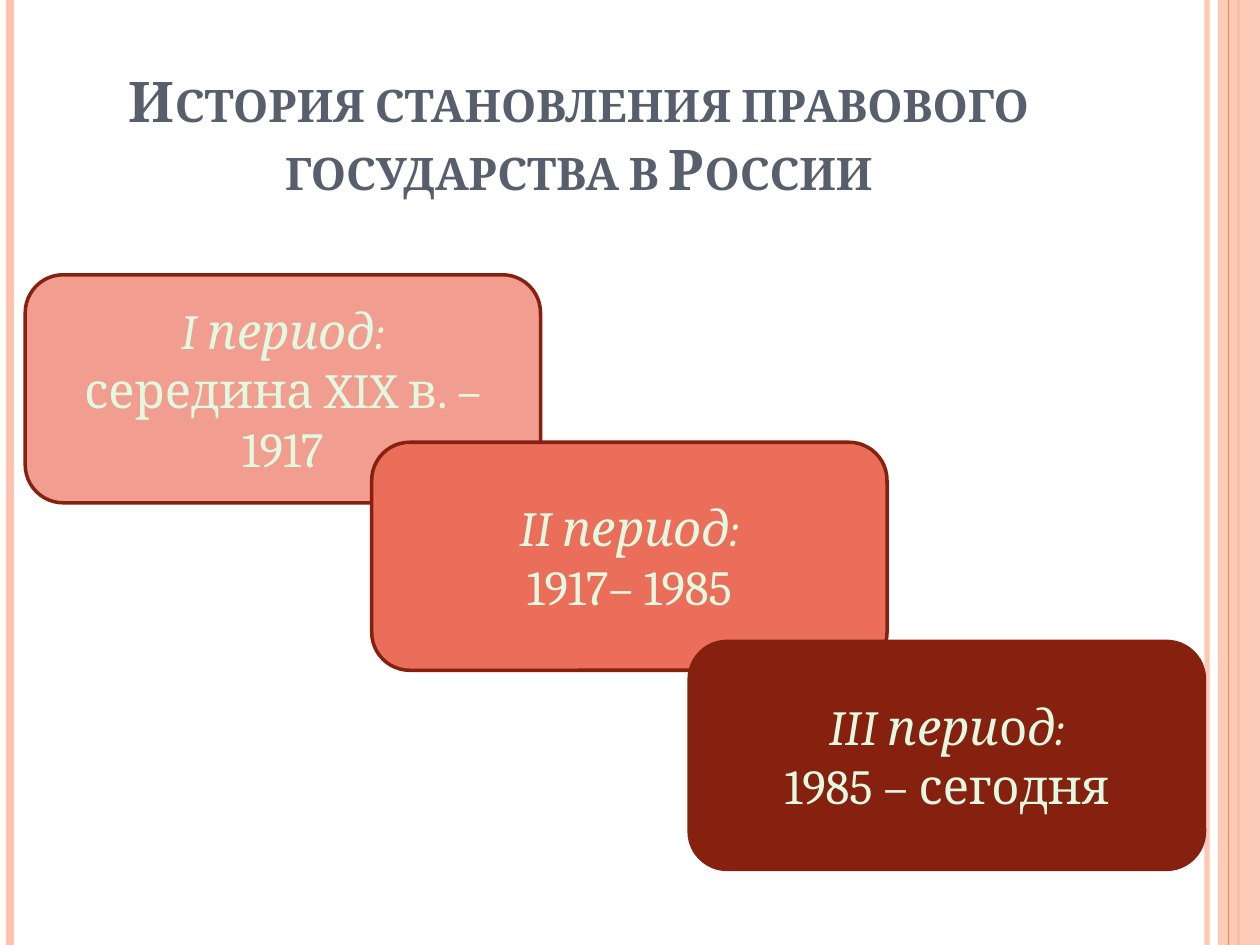
from lxml import etree
from pptx import Presentation
from pptx.dml.color import RGBColor
from pptx.enum import shapes, text
from pptx.oxml import ns
from pptx.util import Pt

# Content: each heading is a list of (words, italic) pieces
TITLE = "История становления правового государства в России"
PERIODS = [
    ([("I период:", True)], "середина XIX в. – 1917"),
    ([("II период:", True)], "1917– 1985"),
    ([("III пери", True), ("о", False), ("д:", True)], "1985 – сегодня"),
]

THEME = {
    "font": "Cambria", "title": 32, "body": 28,
    "back": "FFFFFF", "head": "575F6D", "ink": "E2F9E1", "edge": "862110",
    "fills": ["F19E91", "EB6E5A", "862110"],
    "pale": "FEC3AE", "vivid": "FE8637",
}

# Layout in points
WIDE, HIGH = 720, 540
TITLE_BOX = (36.7, 31.7, 588.2, 90)
CARD = (294.5, 130.3)
SPOTS = [(14.4, 157), (212.4, 252.7), (393.8, 366.5)]
BAND = (696, 0, 24, HIGH)
# Vertical rules: x, colour, width, opacity in percent
UNDER = [(689.8, "pale", 3, 93), (5.8, "pale", 4.5, 100), (707.8, "vivid", 1.5, 100)]
OVER = [(702, "vivid", 0.75, 100)]


def rgb(name):
    return RGBColor.from_string(THEME.get(name, name))


def fade(part, rate):
    """Set the opacity of the solid fill found inside an element."""
    tone = part.find(".//" + ns.qn("a:srgbClr"))
    etree.SubElement(tone, ns.qn("a:alpha")).set("val", str(rate * 1000))


def rule(x, tone, width, rate):
    line = slide.shapes.add_connector(
        shapes.MSO_CONNECTOR.STRAIGHT, Pt(x), Pt(0), Pt(x), Pt(HIGH))
    line.line.color.rgb = rgb(tone)
    line.line.width = Pt(width)
    props = line._element.spPr
    if rate < 100:
        fade(props, rate)
    etree.SubElement(props, ns.qn("a:effectLst"))


def style(para, size, tone):
    para.alignment = text.PP_ALIGN.CENTER
    for run in para.runs:
        run.font.name = THEME["font"]
        run.font.size = Pt(THEME[size])
        run.font.color.rgb = rgb(tone)


def block(kind, box, fill):
    shape = slide.shapes.add_shape(kind, *map(Pt, box))
    shape.shadow.inherit = False
    shape.fill.solid()
    shape.fill.fore_color.rgb = rgb(fill)
    return shape


def card(spot, fill, head, dates):
    shape = block(shapes.MSO_SHAPE.ROUNDED_RECTANGLE, spot + CARD, fill)
    shape.line.color.rgb = rgb("edge")
    shape.line.width = Pt(2)
    frame = shape.text_frame
    frame.word_wrap = True
    frame.vertical_anchor = text.MSO_ANCHOR.MIDDLE
    first, last = frame.paragraphs[0], frame.add_paragraph()
    for words, slant in head:
        run = first.add_run()
        run.text = words
        run.font.italic = slant
    last.text = dates
    for para in (first, last):
        style(para, "body", "ink")


deck = Presentation()
deck.slide_width, deck.slide_height = Pt(WIDE), Pt(HIGH)
slide = deck.slides.add_slide(deck.slide_layouts[5])
slide.background.fill.solid()
slide.background.fill.fore_color.rgb = rgb("back")

# Side decoration
for item in UNDER:
    rule(*item)
band = block(shapes.MSO_SHAPE.RECTANGLE, BAND, "pale")
band.line.fill.background()
fade(band._element.spPr, 87)
for item in OVER:
    rule(*item)

# Title in small capitals
title = slide.shapes.title
title.left, title.top, title.width, title.height = map(Pt, TITLE_BOX)
frame = title.text_frame
frame.text = TITLE
frame.word_wrap = True
frame.auto_size = text.MSO_AUTO_SIZE.NONE
frame.vertical_anchor = text.MSO_ANCHOR.MIDDLE
style(frame.paragraphs[0], "title", "head")
for run in frame.paragraphs[0].runs:
    run.font.bold = True
    run.font._element.set("cap", "small")

# Overlapping steps, one for each period
for spot, fill, (head, dates) in zip(SPOTS, THEME["fills"], PERIODS):
    card(spot, fill, head, dates)

deck.save("out.pptx")
